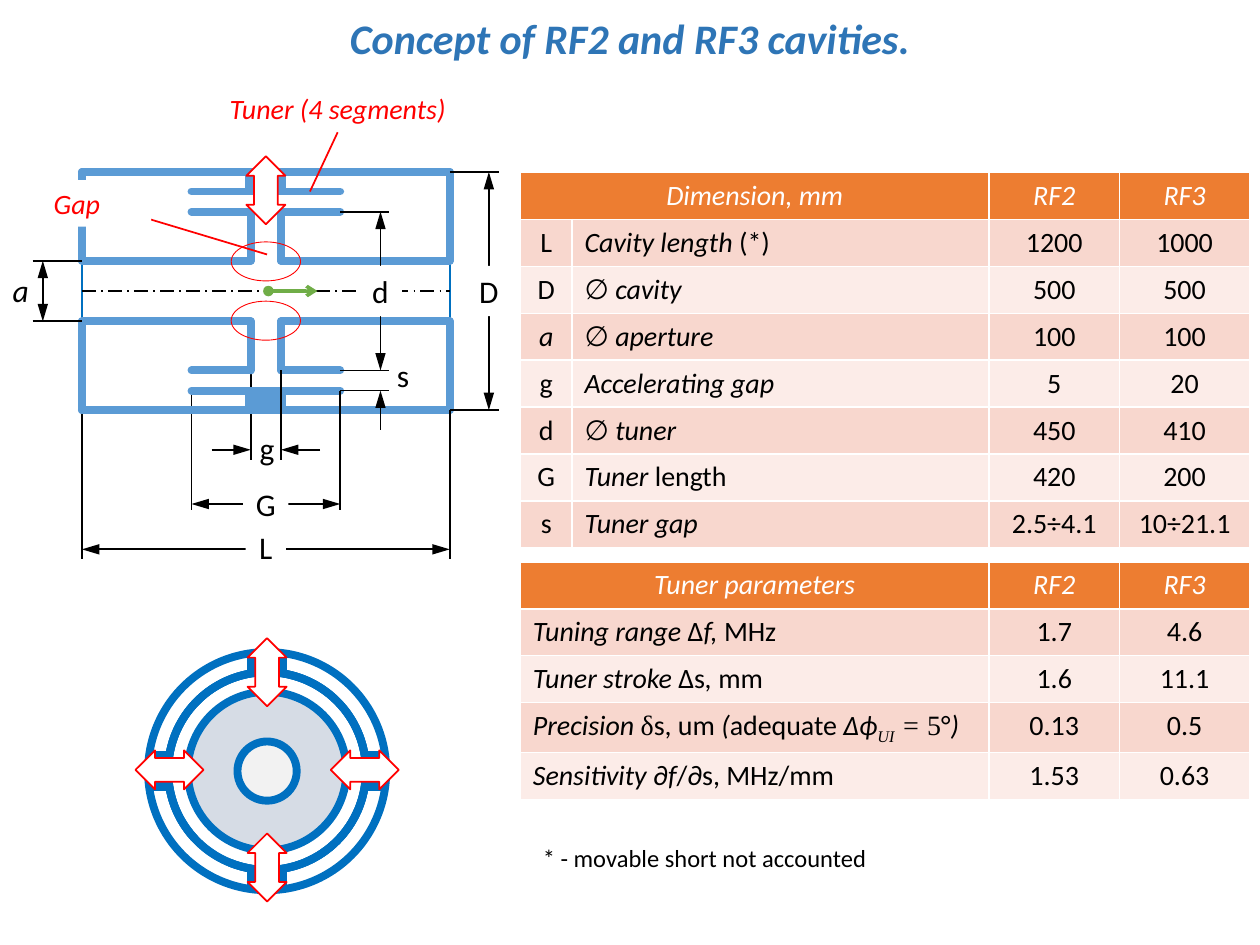
from lxml.etree import SubElement
from pptx import Presentation
from pptx.dml.color import RGBColor
from pptx.enum.dml import MSO_LINE
from pptx.enum.shapes import MSO_CONNECTOR, MSO_SHAPE
from pptx.enum.text import MSO_ANCHOR, MSO_AUTO_SIZE, PP_ALIGN
from pptx.oxml.ns import qn
from pptx.util import Inches, Pt

COLORS = {
    "black": "000000", "white": "FFFFFF", "red": "FF0000", "title": "2E75B6",
    "wall": "5B9BD5", "ring": "0070C0", "beam": "70AD47", "disc": "D6DCE5",
    "hole": "F2F2F2", "header": "ED7D31", "odd": "F8D7CE", "even": "FCECE8",
}
CELL = Inches(0.1)  # grid of 100 columns by 75 rows
SIDES = (-1, 1)


def color(name):
    return RGBColor.from_string(COLORS[name])


def write_text(frame, text, size=18, ink="black", bold=False, align=PP_ALIGN.CENTER):
    """Write one paragraph; _ toggles italic, ~ the serif font, ^ subscript."""
    paragraph = frame.paragraphs[0]
    paragraph.alignment = align
    active, run = set(), None
    for letter in text:
        if letter in "_~^":
            active ^= {letter}
            run = None
            continue
        if run is None:
            run = paragraph.add_run()
            run.font.name = "Times New Roman" if "~" in active else "Calibri"
            run.font.size = Pt(size)
            run.font.bold = bold
            run.font.italic = "_" in active
            run.font.color.rgb = color(ink)
            if "^" in active:
                run.font._element.set("baseline", "-25000")
        run.text += letter


class Sketch:
    """Holds the slide and draws each kind of element in grid units."""

    def __init__(self, slide):
        self.slide = slide
        self.shapes = slide.shapes

    def box(self, *lengths):
        return [int(length * CELL) for length in lengths]

    def title(self, text, left, top, width, height):
        shape = self.shapes.title
        shape.left, shape.top, shape.width, shape.height = self.box(left, top, width, height)
        shape.text_frame.auto_size = MSO_AUTO_SIZE.NONE
        shape.text_frame.vertical_anchor = MSO_ANCHOR.MIDDLE
        write_text(shape.text_frame, text, size=24, ink="title", bold=True)

    def label(self, text, left, top, width, height=4, fill=None, wrap=False, **style):
        shape = self.shapes.add_textbox(*self.box(left, top, width, height))
        shape.text_frame.word_wrap = wrap
        shape.text_frame.auto_size = MSO_AUTO_SIZE.SHAPE_TO_FIT_TEXT
        if fill:
            shape.fill.solid()
            shape.fill.fore_color.rgb = color(fill)
        write_text(shape.text_frame, text, **style)
        return shape

    def shape(self, kind, x, y, width, height, line, weight=1, fill=None, turn=0, adjust=()):
        """Draw a preset shape centred on x, y."""
        shape = self.shapes.add_shape(
            kind, *self.box(x - width / 2, y - height / 2, width, height))
        shape.shadow.inherit = False
        shape.rotation = turn
        for index, value in enumerate(adjust):
            shape.adjustments[index] = value
        if fill:
            shape.fill.solid()
            shape.fill.fore_color.rgb = color(fill)
        else:
            shape.fill.background()
        shape.line.color.rgb = color(line)
        shape.line.width = Pt(weight)
        return shape

    def arc(self, x, y, width, height, start, end, line, weight):
        self.shape(MSO_SHAPE.ARC, x, y, width, height, line, weight,
                   adjust=(start / 0.6, end / 0.6))

    def move_arrow(self, x, y, turn=0):
        self.shape(MSO_SHAPE.UP_DOWN_ARROW, x, y, 3.1, 5.4, "red", fill="white",
                   turn=turn, adjust=(0.53, 0.61))

    def line(self, x1, y1, x2, y2, ink="black", weight=1, head=None, tail=None, dash=None):
        line = self.shapes.add_connector(MSO_CONNECTOR.STRAIGHT, *self.box(x1, y1, x2, y2))
        line.line.color.rgb = color(ink)
        line.line.width = Pt(weight)
        if dash:
            line.line.dash_style = dash
        properties = line.element.spPr
        outline = properties.find(qn("a:ln"))
        if weight > 4:
            outline.set("cap", "rnd")
        for tag, end in (("a:headEnd", head), ("a:tailEnd", tail)):
            if end:
                length = "lg" if end == "triangle" else "med"
                SubElement(outline, qn(tag), type=end, w="med", len=length)
        SubElement(properties, qn("a:effectLst"))
        return line

    def wall(self, *ends):
        self.line(*ends, ink="wall", weight=4.5)

    def dimension(self, *ends, both=True):
        self.line(*ends, head="triangle" if both else None, tail="triangle")

    def table(self, rows, left, top, widths, height, left_column):
        frame = self.shapes.add_table(
            len(rows), len(widths), *self.box(left, top, sum(widths), height * len(rows)))
        table = frame.table
        for column, width in zip(table.columns, widths):
            column.width = int(width * CELL)
        for row_index, row in enumerate(rows):
            for column_index, text in enumerate(row):
                cell = table.cell(row_index, column_index)
                header = row_index == 0
                cell.fill.solid()
                cell.fill.fore_color.rgb = color(
                    "header" if header else ("even", "odd")[row_index % 2])
                to_left = column_index == left_column and not header
                write_text(cell.text_frame, text, size=16, ink="white" if header else "black",
                           align=PP_ALIGN.LEFT if to_left else PP_ALIGN.CENTER)
        return table


def draw_tables(sketch):
    dimensions = [
        ("_Dimension, mm", "", "_RF2", "_RF3"),
        ("L", "_Cavity length _(*)", "1200", "1000"),
        ("D", "∅ _cavity", "500", "500"),
        ("_а", "∅ _aperture", "100", "100"),
        ("g", "_Accelerating gap", "5", "20"),
        ("d", "∅ _tuner", "450", "410"),
        ("G", "_Tuner _length", "420", "200"),
        ("s", "_Tuner gap", "2.5÷4.1", "10÷21.1"),
    ]
    parameters = [
        ("_Tuner parameters", "_RF2", "_RF3"),
        ("_Tuning range _Δ_f, _MHz", "1.7", "4.6"),
        ("_Tuner stroke _Δs_, _mm", "1.6", "11.1"),
        ("_Precision _~δ~s, um _(_adequate_ Δϕ~^UI^ = _5~°_)", "0.13", "0.5"),
        ("_Sensitivity _∂_f_/∂s, MHz/mm", "1.53", "0.63"),
    ]
    table = sketch.table(dimensions, 41.3, 13.7, (4.1, 33.1, 10.35, 10.35), 3.7, 1)
    table.cell(0, 0).merge(table.cell(0, 1))
    sketch.table(parameters, 41.3, 44.6, (37.2, 10.35, 10.35), 3.65, 0)


def draw_cavity(sketch):
    x, y = 21.1, 23.1
    length, tuner, gap = 14.6, 5.9, 1.2          # half widths
    outer, plate, nose, bore = 9.45, 7.9, 6.3, 2.4  # half heights
    left, right = x - length, x + length

    # Walls, mirrored about both axes
    cavity = sketch.shape(MSO_SHAPE.RECTANGLE, x, y, 2 * length, 2 * outer, "ring")
    axis = sketch.line(left, y, right, y, dash=MSO_LINE.LONG_DASH_DOT)
    axis.begin_connect(cavity, 1)
    axis.end_connect(cavity, 3)
    for up in SIDES:
        sketch.wall(left, y + up * outer, right, y + up * outer)
        sketch.wall(x - tuner, y + up * plate, x + tuner, y + up * plate)
        for side in SIDES:
            edge, lip = x + side * length, x + side * gap
            sketch.wall(edge, y + up * outer, edge, y + up * bore)
            sketch.wall(edge, y + up * bore, lip, y + up * bore)
            sketch.wall(lip, y + up * bore, lip, y + up * nose)
            sketch.wall(lip, y + up * nose, x + side * tuner, y + up * nose)
        sketch.shape(MSO_SHAPE.RECTANGLE, x, y + up * 8.65, 3.1, 1.6, "wall", fill="wall")
        start = 0 if up < 0 else 180
        sketch.arc(x, y + up * 2.35, 5.5, 3.1, start, start + 180, "red", 0.5)

        # Extension lines
        sketch.line(2.6, y + up * bore, left, y + up * bore)
        sketch.line(right, y + up * outer, 39.6, y + up * outer)
        sketch.line(x + tuner, y + up * nose, 30.9, y + up * nose)
        sketch.line(x + up * length, y + outer, x + up * length, 44.4)
        sketch.line(x + up * tuner, y + plate, x + up * tuner, 40.5)
        sketch.line(x + up * gap, y + nose, x + up * gap, 36.5)
        sketch.dimension(x + up * 4.3, 35.7, x + up * gap, 35.7, both=False)
    sketch.line(x + tuner, y + plate, 30.9, y + plate)

    # Dimension lines
    sketch.dimension(left, 43.6, right, 43.6)
    sketch.dimension(x - tuner, 40, x + tuner, 40)
    sketch.dimension(38.8, y + outer, 38.8, y - outer)
    sketch.dimension(3.4, y + bore, 3.4, y - bore)
    sketch.dimension(30.2, y - nose, 30.2, y + nose)
    sketch.dimension(30.2, 34.1, 30.2, y + plate, both=False)
    for text, label_left, top, width, fill in (
        ("g", 19.6, 33.6, 3.2, None), ("L", 19.5, 41.4, 3.2, "white"),
        ("_a", 0, 21, 3.3, None), ("D", 37, 21.1, 3.6, "white"),
        ("s", 30.5, 27.8, 3, None), ("d", 28.5, 21.1, 3.4, "white"),
        ("G", 19.3, 38, 3.6, "white"),
    ):
        sketch.label(text, label_left, top, width, fill=fill)

    # Beam, leaders and tuner movement
    sketch.line(21.3, y, 25.2, y, "beam", 2, "oval", "arrow")
    caption = sketch.label("_Tuner (4 segments)", 14.9, 6.8, 23.8, 3.7,
                           wrap=True, size=16, ink="red")
    sketch.line(24.6, 15.2, 26.8, 10.5, "red").end_connect(caption, 2)
    sketch.line(21.2, 20.2, 8.9, 16.5, "red")
    sketch.label("_Gap", 0.2, 14.3, 11.8, 3.7, fill="white", wrap=True, size=16, ink="red")
    sketch.move_arrow(x, 15.1)


def draw_cross_section(sketch):
    x, y = 21.2, 61.2
    directions = ((0, -1), (1, 0), (0, 1), (-1, 0))
    for diameter, fill in ((18.9, None), (12.6, "disc"), (4.7, "hole")):
        sketch.shape(MSO_SHAPE.OVAL, x, y, diameter, diameter, "ring", 4.5, fill)
    for quarter, (across, down) in enumerate(directions):
        middle = (270 + 90 * quarter) % 360
        sketch.arc(x, y, 15.7, 15.7, (middle - 40.5) % 360, (middle + 40.5) % 360, "ring", 4.5)
        sketch.shape(MSO_SHAPE.RECTANGLE, x + 8.65 * across, y + 8.65 * down, 3.1, 1.6,
                     "ring", fill="ring", turn=90 * abs(across))
    for across, down in directions:
        sketch.move_arrow(x + 7.75 * across, y - 0.1 + 7.75 * down, 90 * abs(across))


def main():
    presentation = Presentation()
    presentation.slide_width, presentation.slide_height = 100 * CELL, 75 * CELL
    sketch = Sketch(presentation.slides.add_slide(presentation.slide_layouts[5]))
    sketch.title("_Concept of RF2 and RF3 cavities.", 1.2, 0.5, 97.6, 5)
    draw_tables(sketch)
    draw_cavity(sketch)
    draw_cross_section(sketch)
    sketch.label("* - movable short not accounted", 42.1, 66.4, 27.9, 3.4,
                 size=14, align=PP_ALIGN.LEFT)
    presentation.save("out.pptx")


if __name__ == "__main__":
    main()
